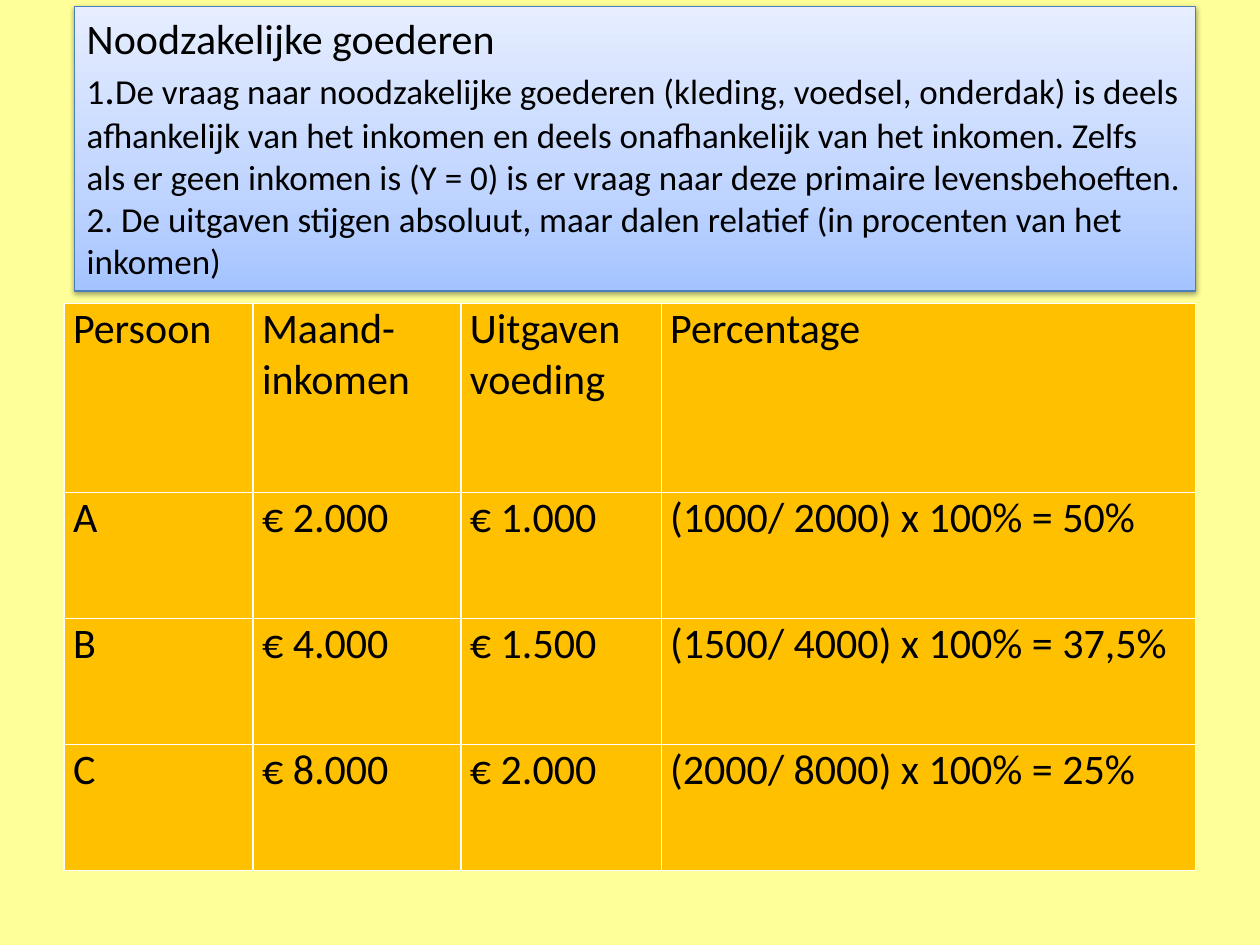
from copy import deepcopy

from lxml.etree import SubElement
from pptx import Presentation
from pptx.dml.color import RGBColor
from pptx.enum.shapes import MSO_SHAPE as Shape
from pptx.enum.text import MSO_ANCHOR as Anchor, MSO_AUTO_SIZE as AutoSize, PP_ALIGN as Align
from pptx.oxml.ns import qn
from pptx.util import Inches, Pt

COLORS = {
    "page": "FFFF99",
    "text": "000000",
    "cell": "FFC000",
    "border": "FFFFFF",
    "outline": "4B7EBC",
    "shadow": "000000",
}
GRADIENT = [(0, "A4C4FF"), (0.35, "BFD4FF"), (1, "E6EEFF")]
FONT = "Calibri"

HEADING = "Noodzakelijke goederen"
POINT_ONE = (
    "De vraag naar noodzakelijke goederen (kleding, voedsel, onderdak) is deels "
    "afhankelijk van het inkomen en deels onafhankelijk van het inkomen. Zelfs "
    "als er geen inkomen is (Y = 0) is er vraag naar deze primaire levensbehoeften."
)
POINT_TWO = (
    "2. De uitgaven stijgen absoluut, maar dalen relatief "
    "(in procenten van het inkomen)"
)
ROWS = [
    ["Persoon", "Maand-inkomen", "Uitgaven voeding", "Percentage"],
    ["A", "€ 2.000", "€ 1.000", "(1000/ 2000) x 100% = 50%"],
    ["B", "€ 4.000", "€ 1.500", "(1500/ 4000) x 100% = 37,5%"],
    ["C", "€ 8.000", "€ 2.000", "(2000/ 8000) x 100% = 25%"],
]
COLUMN_WIDTHS = [1.5, 1.65, 1.59, 4.24]
ROW_HEIGHTS = [1.5, 1, 1, 1]


def rgb(name):
    return RGBColor.from_string(COLORS[name])


def apply(target, values):
    for name, value in values.items():
        setattr(target, name, value)


def add_span(para, text, size):
    span = para.add_run()
    span.text = text
    apply(span.font, {"name": FONT, "size": Pt(size)})
    span.font.color.rgb = rgb("text")


def add_color(parent, name):
    return SubElement(parent, qn("a:srgbClr"), val=COLORS[name])


def fill_gradient(fill):
    fill.gradient()
    fill.gradient_angle = 90
    first = fill.gradient_stops[0].color
    first.rgb = RGBColor.from_string(GRADIENT[0][1])
    stop_list = fill._fill._gradFill.find(qn("a:gsLst"))
    stop_list.insert(1, deepcopy(stop_list[0]))
    for stop, (position, color) in zip(fill.gradient_stops, GRADIENT):
        stop.position = position
        stop.color.rgb = RGBColor.from_string(color)


def add_shadow(shape):
    shape.shadow.inherit = False
    effects = shape._element.spPr.find(qn("a:effectLst"))
    shadow = SubElement(
        effects, qn("a:outerShdw"), blurRad=str(Pt(3.1)), dist=str(Pt(1.6)),
        dir="5400000", rotWithShape="0",
    )
    SubElement(add_color(shadow, "shadow"), qn("a:alpha"), val="38000")


def add_explanation(page, box):
    panel = page.shapes.add_shape(Shape.RECTANGLE, *map(Inches, box))
    fill_gradient(panel.fill)
    panel.line.color.rgb = rgb("outline")
    panel.line.width = Pt(0.75)
    add_shadow(panel)
    frame = panel.text_frame
    apply(frame, {
        "word_wrap": True,
        "auto_size": AutoSize.SHAPE_TO_FIT_TEXT,
        "vertical_anchor": Anchor.TOP,
    })
    para = frame.paragraphs[0]
    add_span(para, HEADING, 24)
    para.add_line_break()
    for text, size in [("1", 20), (".", 24), (POINT_ONE, 20)]:
        add_span(para, text, size)
    add_span(frame.add_paragraph(), POINT_TWO, 20)
    for para in frame.paragraphs:
        para.alignment = Align.LEFT


def add_borders(cell):
    properties = cell._tc.get_or_add_tcPr()
    for side in ("lnL", "lnR", "lnT", "lnB"):
        line = SubElement(properties, qn(f"a:{side}"), w=str(Pt(1)))
        add_color(SubElement(line, qn("a:solidFill")), "border")


def add_spending_table(page, box):
    table = page.shapes.add_table(len(ROWS), len(ROWS[0]), *map(Inches, box)).table
    apply(table, {"first_row": False, "horz_banding": False})
    for column, width in zip(table.columns, COLUMN_WIDTHS):
        column.width = Inches(width)
    for row, height, texts in zip(table.rows, ROW_HEIGHTS, ROWS):
        row.height = Inches(height)
        for cell, text in zip(row.cells, texts):
            add_borders(cell)
            apply(cell, {
                "margin_left": Inches(0.07),
                "margin_right": Inches(0.07),
                "margin_top": 0,
                "margin_bottom": 0,
            })
            cell.fill.solid()
            cell.fill.fore_color.rgb = rgb("cell")
            add_span(cell.text_frame.paragraphs[0], text, 24)


def main():
    deck = Presentation()
    apply(deck, {"slide_width": Inches(10), "slide_height": Inches(7.5)})
    page = deck.slides.add_slide(deck.slide_layouts[6])
    page.background.fill.solid()
    page.background.fill.fore_color.rgb = rgb("page")
    add_spending_table(page, (0.51, 2.41, sum(COLUMN_WIDTHS), sum(ROW_HEIGHTS)))
    add_explanation(page, (0.59, 0.05, 8.9, 2.26))
    deck.save("out.pptx")


if __name__ == "__main__":
    main()
